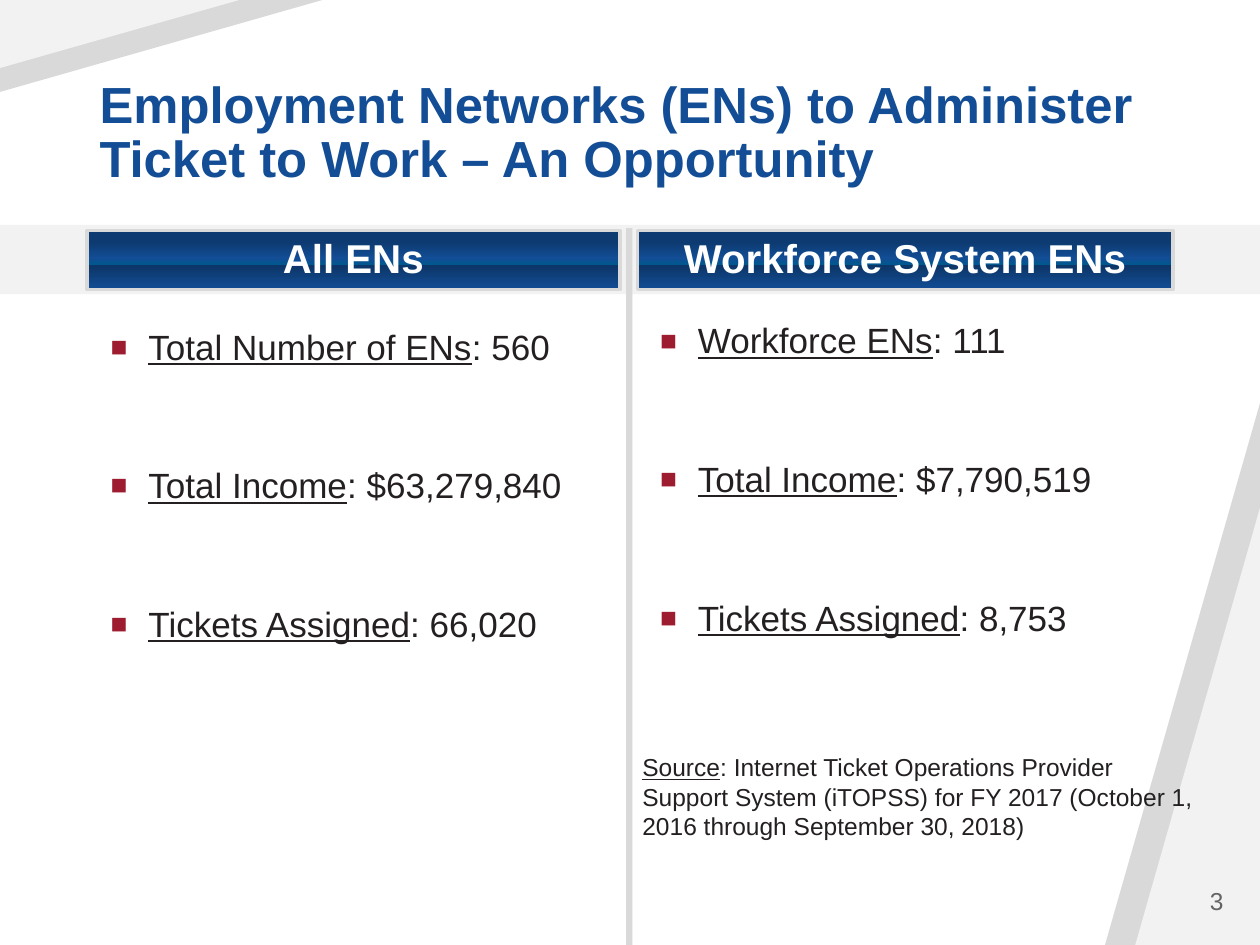
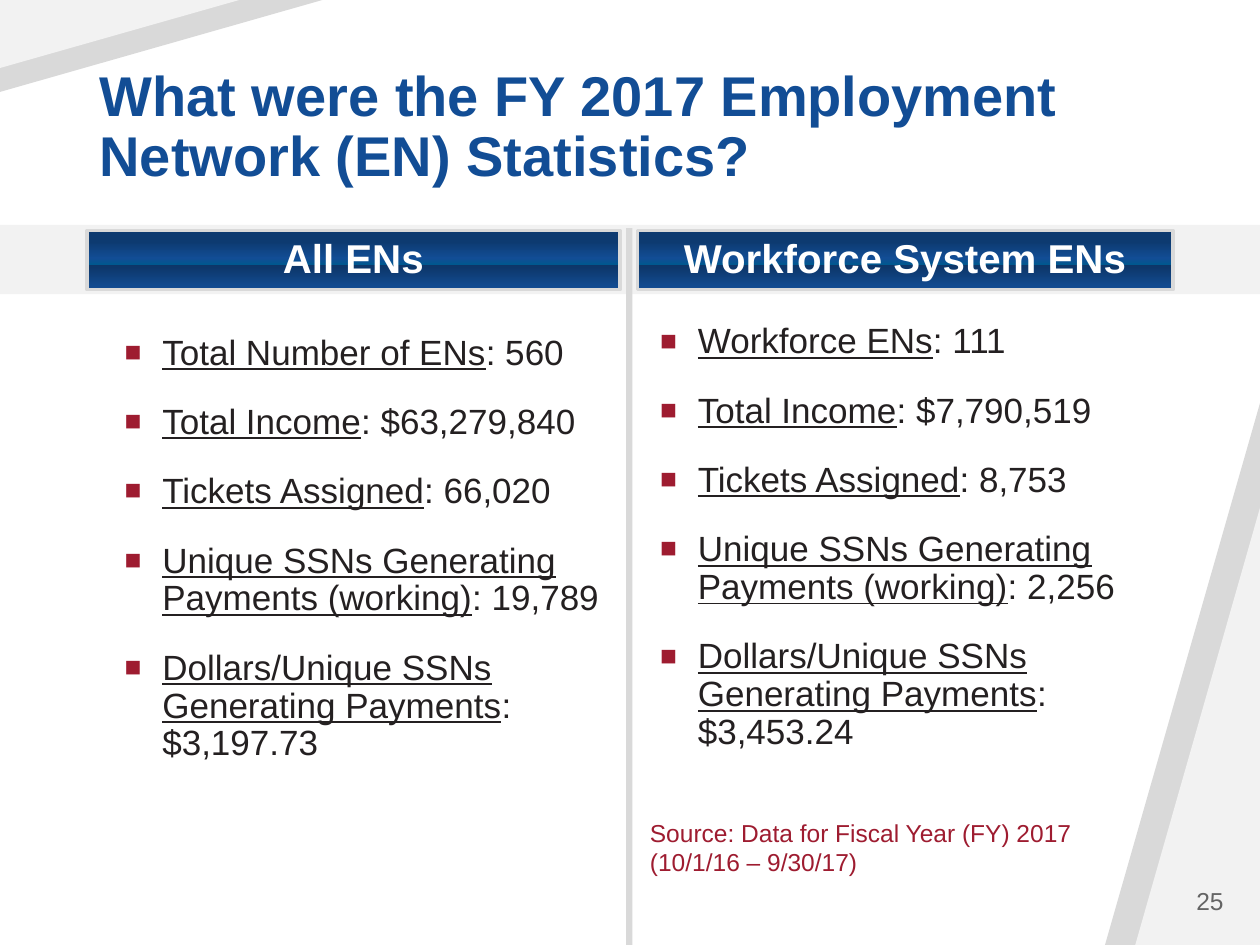
from lxml import etree
from pptx import Presentation
from pptx.dml.color import RGBColor
from pptx.enum.shapes import MSO_SHAPE as Shape
from pptx.enum.text import MSO_ANCHOR as Anchor, MSO_AUTO_SIZE as AutoSize, PP_ALIGN as Align
from pptx.oxml import parse_xml
from pptx.oxml.ns import nsdecls, qn
from pptx.util import Inches, Pt

# Shared look
WIDTH, HEIGHT = Inches(10), Inches(7.5)
FONT = "Arial"
BLUE, RED, INK, GRAY = "124D95", "9E1C30", "242021", "646464"
LIGHT, MID, WHITE = "F2F2F2", "D9D9D9", "FFFFFF"
HEADING_STOPS = [(19, "0D3A70"), (47, BLUE), (58, "00588F"), (59, "0D3668"), (100, BLUE)]
CORNERS = [
    (MID, [(100, 42.67), (100, 100), (87.7, 100)]),
    (LIGHT, [(100, 53.73), (100, 100), (90.1, 100)]),
    (MID, [(0, 0), (25.6, 0), (0, 9.73)]),
    (LIGHT, [(0, 0), (19, 0), (0, 7.2)]),
]
HEADINGS = [("All ENs", 6.9, 42.3), ("Workforce System ENs", 50.6, 42.5)]


def color(value):
    return RGBColor.from_string(value)


def point(x, y):
    """Turn percentages of the slide's size into a position."""
    return int(WIDTH * x / 100), int(HEIGHT * y / 100)


def box(left, top, width, height):
    return (*point(left, top), *point(width, height))


def style(paragraph, size, ink, bold=False, align=Align.LEFT):
    paragraph.alignment = align
    for run in paragraph.runs:
        run.font.name = FONT
        run.font.size = Pt(size)
        run.font.bold = bold
        run.font.color.rgb = color(ink)


def paint(shape, fill):
    shape.shadow.inherit = False
    shape.fill.solid()
    shape.fill.fore_color.rgb = color(fill)
    shape.line.fill.background()


def add_rectangle(slide, area, fill):
    shape = slide.shapes.add_shape(Shape.RECTANGLE, *box(*area))
    paint(shape, fill)
    return shape


def add_backdrop(slide):
    for fill, (start, *rest) in CORNERS:
        builder = slide.shapes.build_freeform(*point(*start))
        builder.add_line_segments([point(*corner) for corner in rest])
        paint(builder.convert_to_shape(), fill)
    add_rectangle(slide, (0, 23.8, 100, 7.33), LIGHT)
    add_rectangle(slide, (49.7, 24.13, 0.5, 75.87), MID)


def add_title(slide, text, size):
    title = slide.shapes.title
    title.left, title.top, title.width, title.height = box(6.9, 5.33, 86.2, 15.33)
    frame = title.text_frame
    frame.text = text
    frame.auto_size = AutoSize.NONE
    frame.vertical_anchor = Anchor.BOTTOM
    frame.paragraphs[0].line_spacing = 0.9
    style(frame.paragraphs[0], size, BLUE, bold=True)


def fill_gradient(shape):
    """Replace the solid fill by the vertical gradient of the headings."""
    stops = "".join(f'<a:gs pos="{share * 1000}"><a:srgbClr val="{value}"/></a:gs>'
                    for share, value in HEADING_STOPS)
    solid = shape.fill._xPr.find(qn("a:solidFill"))
    solid.getparent().replace(solid, parse_xml(
        f'<a:gradFill {nsdecls("a")} rotWithShape="1"><a:gsLst>{stops}</a:gsLst>'
        '<a:lin ang="5400000" scaled="0"/></a:gradFill>'))


def add_heading(slide, text, left, width):
    shape = add_rectangle(slide, (left, 24.4, width, 6.27), BLUE)
    fill_gradient(shape)
    shape.line.color.rgb = color(MID)
    shape.line.width = Pt(2)
    frame = shape.text_frame
    frame.text = text
    frame.word_wrap = True
    frame.vertical_anchor = Anchor.MIDDLE
    frame.margin_left = frame.margin_right = Inches(0.05)
    frame.margin_top = frame.margin_bottom = Inches(0.06)
    frame.paragraphs[0].line_spacing = 0.9
    style(frame.paragraphs[0], 23, WHITE, bold=True, align=Align.CENTER)


def add_text_box(slide, area):
    frame = slide.shapes.add_textbox(*box(*area)).text_frame
    frame.word_wrap = True
    return frame


def add_bullet(paragraph):
    properties = paragraph._p.get_or_add_pPr()
    properties.set("marL", str(Inches(0.3)))
    properties.set("indent", str(-Inches(0.3)))
    bullet_color = etree.SubElement(properties, qn("a:buClr"))
    etree.SubElement(bullet_color, qn("a:srgbClr"), val=RED)
    etree.SubElement(properties, qn("a:buSzPct"), val="80000")
    etree.SubElement(properties, qn("a:buFont"), typeface=FONT)
    etree.SubElement(properties, qn("a:buChar"), char="■")


def write_labelled(paragraph, label, value, size):
    """Write an underlined label, a colon and its value."""
    for text, underlined in ((label, True), (f": {value}", False)):
        run = paragraph.add_run()
        run.text = text
        run.font.underline = underlined
    style(paragraph, size, INK)


def add_figures(slide, area, labels, values, gap):
    frame = add_text_box(slide, area)
    for index, (label, value) in enumerate(zip(labels, values)):
        paragraph = frame.add_paragraph() if index else frame.paragraphs[0]
        add_bullet(paragraph)
        paragraph.line_spacing = 0.9
        paragraph.space_before = Pt(gap if index else 0)
        write_labelled(paragraph, label, value, 20)


def add_page_number(slide, number):
    frame = add_text_box(slide, (84.1, 92.67, 14, 5.33))
    frame.vertical_anchor = Anchor.MIDDLE
    frame.text = str(number)
    style(frame.paragraphs[0], 14, GRAY, align=Align.RIGHT)


def add_comparison_slide(presentation, title, title_size, number):
    """Start a slide with everything the two comparisons share."""
    slide = presentation.slides.add_slide(presentation.slide_layouts[5])
    add_backdrop(slide)
    add_title(slide, title, title_size)
    for heading in HEADINGS:
        add_heading(slide, *heading)
    add_page_number(slide, number)
    return slide


def main():
    presentation = Presentation()
    presentation.slide_width, presentation.slide_height = WIDTH, HEIGHT

    totals = ["Total Income", "Tickets Assigned"]
    payments = ["Unique SSNs Generating Payments (working)",
                "Dollars/Unique SSNs Generating Payments"]
    all_labels = ["Total Number of ENs", *totals]
    workforce_labels = ["Workforce ENs", *totals]
    all_values = ["560", "$63,279,840", "66,020"]
    workforce_values = ["111", "$7,790,519", "8,753"]
    workforce_area = (51.4, 33.6, 41, 56)

    # Opportunity: three totals, widely spaced
    slide = add_comparison_slide(
        presentation,
        "Employment Networks (ENs) to Administer Ticket to Work – An Opportunity", 29, 3)
    add_figures(slide, (7.8, 34.27, 41, 56), all_labels, all_values, 57.6)
    add_figures(slide, workforce_area, workforce_labels, workforce_values, 57.6)
    source = add_text_box(slide, (50, 78.93, 45.7, 14.8))
    write_labelled(
        source.paragraphs[0], "Source",
        "Internet Ticket Operations Provider Support System (iTOPSS) for FY 2017 "
        "(October 1, 2016 through September 30, 2018)", 14)

    # Statistics: the totals and the payments
    slide = add_comparison_slide(
        presentation, "What were the FY 2017 Employment Network (EN) Statistics?", 32, 25)
    add_figures(slide, (8.9, 34.8, 41, 48.67), all_labels + payments,
                all_values + ["19,789", "$3,197.73"], 18)
    add_figures(slide, workforce_area, workforce_labels + payments,
                workforce_values + ["2,256", "$3,453.24"], 18)
    source = add_text_box(slide, (50.6, 85.87, 38, 7.6))
    source.text = "Source: Data for Fiscal Year (FY) 2017 (10/1/16 – 9/30/17)"
    style(source.paragraphs[0], 14, RED)

    presentation.save("out.pptx")


if __name__ == "__main__":
    main()
